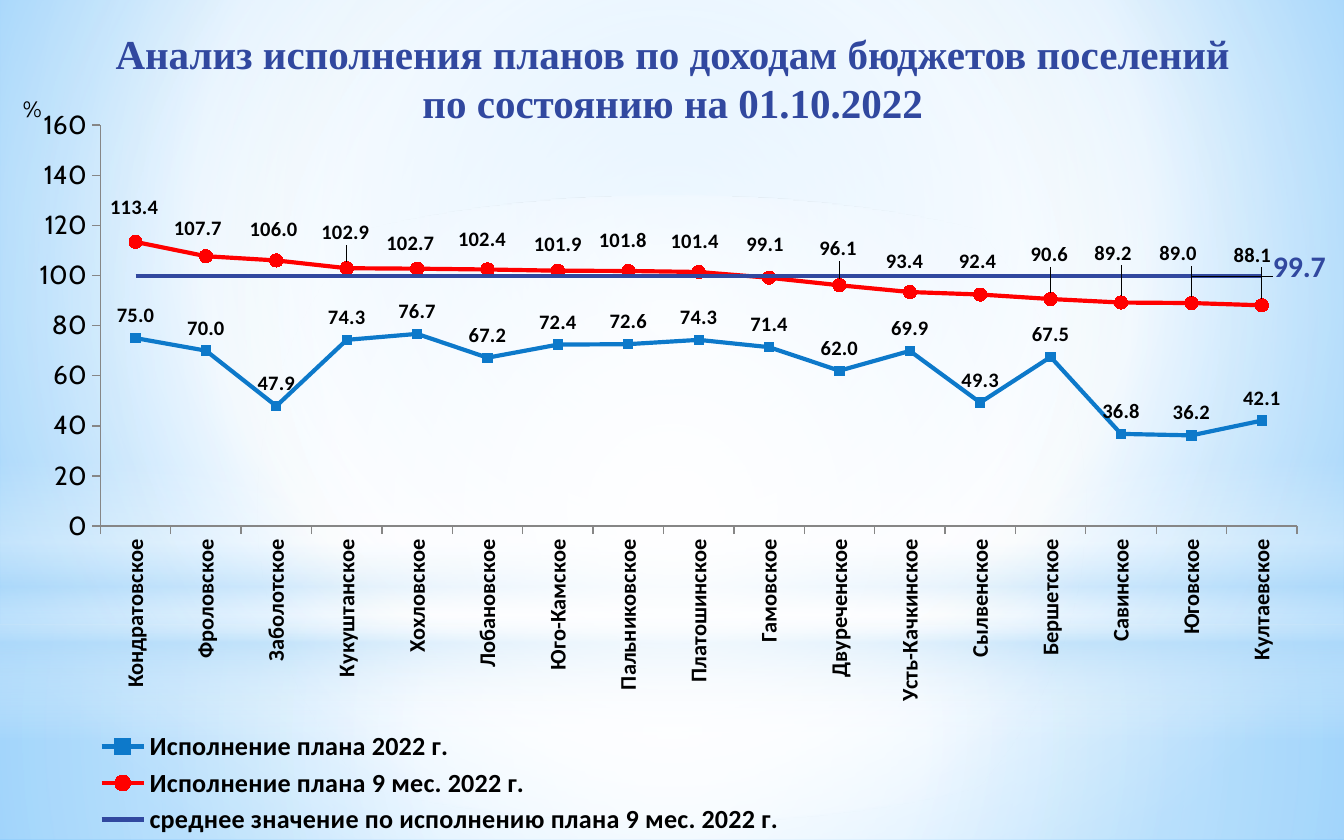
from lxml import etree
from pptx import Presentation
from pptx.chart.data import CategoryChartData
from pptx.dml.color import RGBColor
from pptx.enum.chart import (XL_CHART_TYPE, XL_LABEL_POSITION, XL_LEGEND_POSITION,
                             XL_MARKER_STYLE, XL_TICK_MARK)
from pptx.enum.shapes import MSO_SHAPE
from pptx.enum.text import MSO_ANCHOR, PP_ALIGN
from pptx.oxml import parse_xml
from pptx.oxml.ns import nsdecls, qn
from pptx.util import Inches, Pt

LINE_CHART = XL_CHART_TYPE.LINE_MARKERS
ABOVE, RIGHT = XL_LABEL_POSITION.ABOVE, XL_LABEL_POSITION.RIGHT
BOTTOM = XL_LEGEND_POSITION.BOTTOM
SQUARE, CIRCLE, NO_MARKER = XL_MARKER_STYLE.SQUARE, XL_MARKER_STYLE.CIRCLE, XL_MARKER_STYLE.NONE
TICK_OUT = XL_TICK_MARK.OUTSIDE
RECTANGLE, OVAL = MSO_SHAPE.RECTANGLE, MSO_SHAPE.OVAL
CENTER, MIDDLE = PP_ALIGN.CENTER, MSO_ANCHOR.MIDDLE

NAVY, BLUE, RED, BLACK, GRAY = "31489F", "0D79CA", "FF0000", "000000", "868686"
SKY = "B4DCFA"
LABEL_FORMAT = "#,##0.0"

SETTLEMENTS = [
    "Кондратовское", "Фроловское", "Заболотское", "Кукуштанское", "Хохловское",
    "Лобановское", "Юго-Камское", "Пальниковское", "Платошинское", "Гамовское",
    "Двуреченское", "Усть-Качкинское", "Сылвенское", "Бершетское", "Савинское",
    "Юговское", "Култаевское"]
YEAR_PLAN = [75, 70, 47.9, 74.3, 76.7, 67.2, 72.4, 72.6, 74.3, 71.4, 62, 69.9,
             49.3, 67.5, 36.8, 36.2, 42.1]
NINE_MONTHS = [113.4, 107.7, 106, 102.9, 102.7, 102.4, 101.9, 101.8, 101.4, 99.1,
               96.1, 93.4, 92.4, 90.6, 89.2, 89, 88.1]
AVERAGE = 99.7
AVERAGE_LABEL_POINT = 15
# Label shifts in thousandths of the chart's width and height
NINE_MONTHS_SHIFTS = [
    (-1, -13), (-6, -4), (-2, -9), (-1, -15), (-5, -1), (-4, -7), (0, -3), (-4, -8),
    (-3, -8), (-3, -12), (-1, -16), (-4, -8), (-2, -12), (-1, -26), (-6, -33),
    (-10, -33), (-7, -34)]


def rgb(color):
    return RGBColor.from_string(color)


def style_font(font, size, color=BLACK, name="Calibri", bold=True):
    font.size, font.name, font.bold = Pt(size), name, bold
    font.color.rgb = rgb(color)


def write_text(frame, text, align=CENTER, **font_format):
    frame.text = text
    paragraph = frame.paragraphs[0]
    paragraph.alignment = align
    for run in paragraph.runs:
        style_font(run.font, **font_format)


def gradient(stops, focus=None):
    """Circular gradient around focus (left, top, right, bottom), else top to bottom."""
    stop_xml = "".join(
        f'<a:gs pos="{pos * 1000}"><a:srgbClr val="{color}">'
        f'<a:alpha val="{opacity * 1000}"/></a:srgbClr></a:gs>'
        for pos, color, opacity in stops)
    if focus:
        sides = " ".join(f'{side}="{value * 1000}"' for side, value in zip("ltrb", focus))
        direction = f'<a:path path="circle"><a:fillToRect {sides}/></a:path>'
    else:
        direction = '<a:lin ang="5400000" scaled="0"/>'
    return parse_xml(f'<a:gradFill {nsdecls("a")} rotWithShape="1">'
                     f'<a:gsLst>{stop_xml}</a:gsLst>{direction}</a:gradFill>')


def add_glow(slide, kind, box, stops, focus=None):
    glow = slide.shapes.add_shape(kind, *map(Inches, box))
    glow.shadow.inherit = False
    glow.line.fill.background()
    glow.fill.solid()
    solid = glow._element.spPr.find(qn("a:solidFill"))
    solid.getparent().replace(solid, gradient(stops, focus))


def add_backdrop(slide, width, height):
    slide.background.fill.solid()
    solid = slide.background._cSld.find(".//" + qn("a:solidFill"))
    solid.getparent().replace(solid, gradient(
        [(0, "9ED5FF", 100), (60, "FFFFFF", 100), (100, "5BB9FF", 100)], (20, 10, 20, 60)))
    horizon, middle = 4.65, (50, 50, 50, 50)
    add_glow(slide, RECTANGLE, (0, horizon, width, height - horizon),
             [(0, "FFFFFF", 91), (37, "FFFFFF", 76), (100, SKY, 79)], middle)
    add_glow(slide, RECTANGLE, (0, 0, width, horizon),
             [(0, "FFFFFF", 89), (48, "FFFFFF", 62), (100, SKY, 79)], middle)
    add_glow(slide, RECTANGLE, (0, 3.43, width, 2.08),
             [(0, "FFFFFF", 0), (29, "FFFFFF", 30), (45, SKY, 40),
              (55, "FFFFFF", 26), (65, SKY, 60), (100, "FFFFFF", 0)])
    add_glow(slide, OVAL, (0, 1.46, width, horizon),
             [(0, "FFFFFF", 100), (56, "FFFFFF", 0)], middle)


def place_title(slide, box):
    title = slide.shapes.title
    title.left, title.top, title.width, title.height = map(Inches, box)
    title.text_frame.vertical_anchor = MIDDLE
    write_text(title.text_frame,
               "Анализ исполнения планов по доходам бюджетов поселений\v"
               "по состоянию на 01.10.2022",
               size=22, color=NAVY, name="Times New Roman")
    slide.shapes._spTree.append(title._element)  # in front of the backdrop


def manual_layout(edge_mode=True, inner=False, **fractions):
    settings = [("layoutTarget", "inner")] if inner else []
    if edge_mode:
        settings += [("xMode", "edge"), ("yMode", "edge")]
    settings += fractions.items()
    layout = etree.Element(qn("c:layout"))
    manual = etree.SubElement(layout, qn("c:manualLayout"))
    for tag, value in settings:
        etree.SubElement(manual, qn(f"c:{tag}")).set("val", str(value))
    return layout


def set_layout(element, layout, after=None):
    """Replace the element's layout, or put one behind the child named by after."""
    for old in element.findall(qn("c:layout")):
        element.remove(old)
    previous = element.find(qn(after)) if after else None
    element.insert(0 if previous is None else element.index(previous) + 1, layout)


def shift_label(series, index, shift, position, **font_format):
    label = series.points[index].data_label
    style_font(label.font, **font_format)
    label.position = position
    element = series._element.xpath(f'c:dLbls/c:dLbl[c:idx/@val="{index}"]')[0]
    x, y = (value / 1000 for value in shift)
    set_layout(element, manual_layout(edge_mode=False, x=x, y=y), after="c:idx")
    number_format = etree.Element(qn("c:numFmt"), formatCode=LABEL_FORMAT, sourceLinked="0")
    element.insert(2, number_format)


def style_series(series, color, marker, marker_size=5):
    series.smooth = False
    series.format.line.color.rgb = rgb(color)
    series.format.line.width = Pt(2.25)
    series.marker.style = marker
    if marker != NO_MARKER:
        series.marker.size = marker_size
        series.marker.format.fill.solid()
        series.marker.format.fill.fore_color.rgb = rgb(color)
        series.marker.format.line.color.rgb = rgb(color)


def show_values(series):
    labels = series.data_labels
    labels.show_value = True
    labels.position = ABOVE
    labels.number_format, labels.number_format_is_linked = LABEL_FORMAT, False
    style_font(labels.font, 11)


def style_axes(chart):
    values, settlements = chart.value_axis, chart.category_axis
    for axis in (values, settlements):
        axis.has_major_gridlines = False
        axis.major_tick_mark = TICK_OUT
        axis.format.line.color.rgb = rgb(GRAY)
    values.minimum_scale, values.maximum_scale, values.major_unit = 0, 160, 20
    values.tick_labels.number_format = "#,##0"
    values.tick_labels.number_format_is_linked = False
    style_font(values.tick_labels.font, 14, name="Cabin", bold=False)
    style_font(settlements.tick_labels.font, 12)
    settlements._element.find(qn("c:txPr")).find(qn("a:bodyPr")).set("rot", "-5400000")
    unit = values.axis_title
    write_text(unit.text_frame, "%", size=12, name="Cabin", bold=False)
    unit.text_frame._txBody.find(qn("a:bodyPr")).set("rot", "0")
    set_layout(unit._element, manual_layout(x=0.01, y=0.01), after="c:tx")


def add_execution_chart(slide, box):
    data = CategoryChartData()
    data.categories = SETTLEMENTS
    data.add_series("Исполнение плана 2022 г.", YEAR_PLAN)
    data.add_series("Исполнение плана 9 мес. 2022 г.", NINE_MONTHS)
    data.add_series("среднее значение по исполнению плана 9 мес. 2022 г.",
                    [AVERAGE] * len(SETTLEMENTS))
    chart = slide.shapes.add_chart(LINE_CHART, *map(Inches, box), data).chart
    chart.has_title = False
    style_font(chart.font, 18, name="Cabin", bold=False)
    plot_area = chart._chartSpace.chart.plotArea
    set_layout(plot_area, manual_layout(inner=True, x=0.071, y=0.057, w=0.894, h=0.529))
    style_axes(chart)

    chart.plots[0].vary_by_categories = False
    year, nine_months, average = chart.plots[0].series
    style_series(year, BLUE, SQUARE)
    style_series(nine_months, RED, CIRCLE, 7)
    style_series(average, NAVY, NO_MARKER)
    show_values(year)
    show_values(nine_months)
    for index, shift in enumerate(NINE_MONTHS_SHIFTS):
        shift_label(nine_months, index, shift, ABOVE, size=11)
    shift_label(average, AVERAGE_LABEL_POINT, (57, -11), RIGHT, size=16, color=NAVY)

    chart.has_legend = True
    chart.legend.position = BOTTOM
    chart.legend.include_in_layout = False
    style_font(chart.legend.font, 14)
    set_layout(chart.legend._element, manual_layout(x=0.05, y=0.85, w=0.55, h=0.15),
               after="c:legendPos")


def main():
    width, height = 10, 6.25
    deck = Presentation()
    deck.slide_width, deck.slide_height = Inches(width), Inches(height)
    slide = deck.slides.add_slide(deck.slide_layouts.get_by_name("Title Only"))
    add_backdrop(slide, width, height)
    place_title(slide, (0.2, 0.13, 9.61, 0.89))
    add_execution_chart(slide, (0.04, 0.61, 9.96, 5.64))
    deck.save("out.pptx")


if __name__ == "__main__":
    main()
